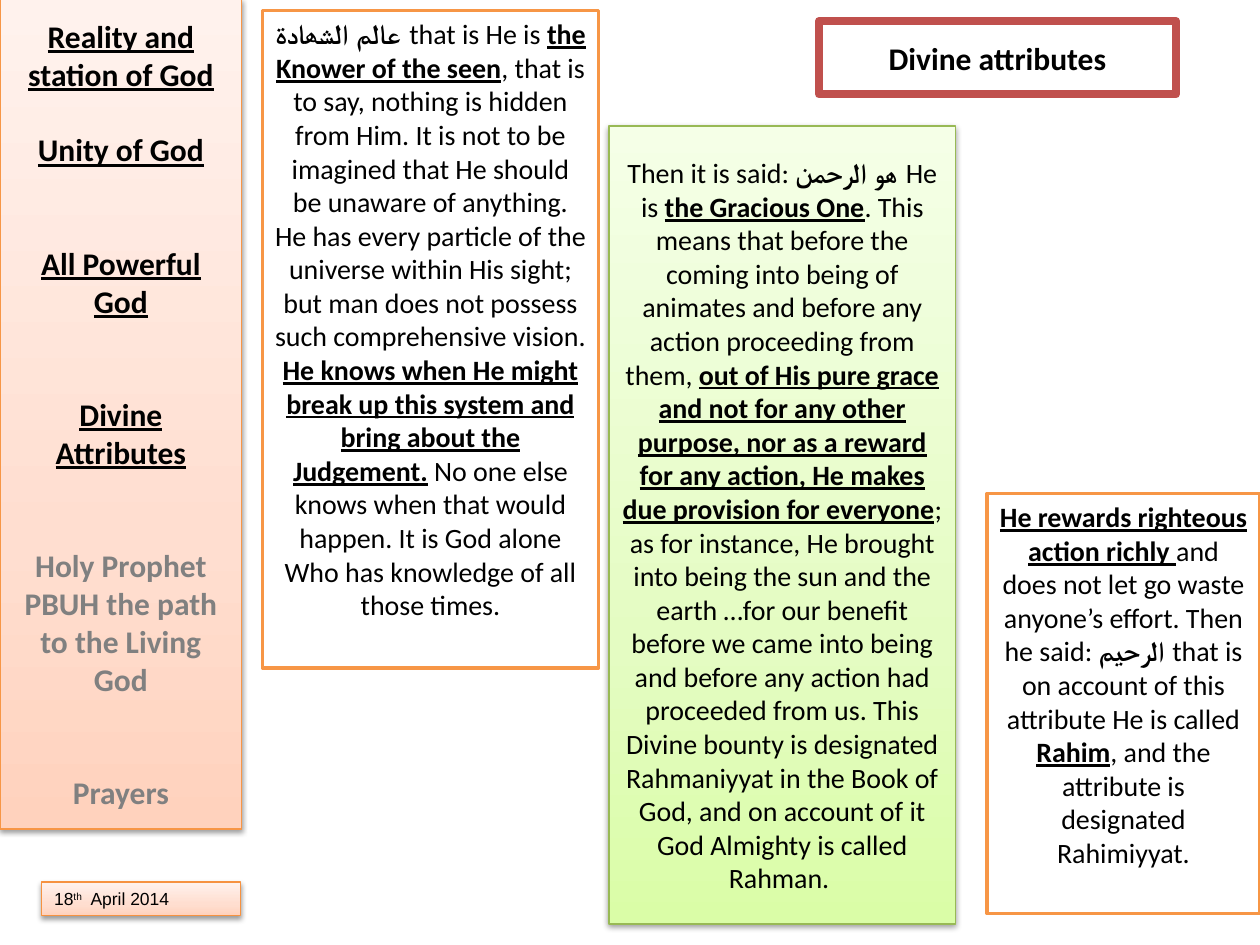
from lxml.etree import SubElement
from pptx import Presentation
from pptx.dml.color import RGBColor
from pptx.enum.shapes import MSO_SHAPE
from pptx.enum.text import MSO_ANCHOR, PP_ALIGN
from pptx.oxml import parse_xml
from pptx.oxml.ns import nsdecls, qn
from pptx.util import Pt

COLORS = {
    "text": "000000",
    "upcoming": "808080",
    "white": "FFFFFF",
    "orange": "F79646",
    "date_edge": "F69240",
    "green": "98B955",
    "red": "C0504D",
}
PEACH = ("FFD2BD", "FFDED0", "FFF2ED")
LIME = ("DAFDA7", "E4FCC2", "F5FFE7")
LINE_HEIGHT = 21.6


def add_panel(left, top, width, height, edge, weight, gradient=None, anchor=MSO_ANCHOR.TOP):
    """Add a box, white and flat, or with a bottom-to-top gradient and a soft shadow."""
    panel = slide.shapes.add_shape(
        MSO_SHAPE.RECTANGLE, Pt(left), Pt(top), Pt(width), Pt(height))
    panel.shadow.inherit = False
    panel.line.color.rgb = RGBColor.from_string(COLORS[edge])
    panel.line.width = Pt(weight)
    panel.text_frame.word_wrap = True
    panel.text_frame.vertical_anchor = anchor
    if gradient is None:
        panel.fill.solid()
        panel.fill.fore_color.rgb = RGBColor.from_string(COLORS["white"])
        return panel

    panel.fill.gradient()
    properties = panel.element.spPr
    stops = "".join(
        f'<a:gs pos="{position}"><a:srgbClr val="{color}"/></a:gs>'
        for position, color in zip((0, 35000, 100000), gradient))
    properties.replace(properties.find(qn("a:gradFill")), parse_xml(
        f'<a:gradFill {nsdecls("a")} rotWithShape="1"><a:gsLst>{stops}</a:gsLst>'
        '<a:lin ang="16200000" scaled="0"/></a:gradFill>'))
    shadow = SubElement(
        properties.find(qn("a:effectLst")), qn("a:outerShdw"),
        blurRad=str(Pt(3.1)), dist=str(Pt(1.6)), dir="5400000", rotWithShape="0")
    shadow_color = SubElement(shadow, qn("a:srgbClr"), val="000000")
    SubElement(shadow_color, qn("a:alpha"), val="38000")
    return panel


def write_runs(paragraph, runs, size, color="text", font="Calibri", align=PP_ALIGN.CENTER):
    """Write (text, style) pairs; style holds b for bold and u for underlined."""
    paragraph.alignment = align
    for text, style in runs:
        run = paragraph.add_run()
        run.text = text
        run.font.name = font
        run.font.size = Pt(size)
        run.font.bold = "b" in style
        run.font.underline = "u" in style
        run.font.color.rgb = RGBColor.from_string(COLORS[color])


prs = Presentation()
prs.slide_width, prs.slide_height = Pt(720), Pt(540)
slide = prs.slides.add_slide(prs.slide_layouts[6])

# Topic sidebar: topic, style, colour, empty lines above
topics = [
    ("Reality and station of God", "bu", "text", 0),
    ("Unity of God", "bu", "text", 1),
    ("All Powerful God", "bu", "text", 2),
    ("Divine Attributes", "bu", "text", 2),
    ("Holy Prophet PBUH the path to the Living God", "b", "upcoming", 2),
    ("Prayers", "b", "upcoming", 2),
]
sidebar = add_panel(0, -0.7, 138.2, 474.4, "orange", 0.75, PEACH, MSO_ANCHOR.MIDDLE).text_frame
for number, (topic, style, color, gap) in enumerate(topics):
    paragraph = sidebar.add_paragraph() if number else sidebar.paragraphs[0]
    paragraph.space_before = Pt(gap * LINE_HEIGHT)
    write_runs(paragraph, [(topic, style)], 18, color)

# Date
date = add_panel(23.8, 504, 113.8, 19.4, "date_edge", 0.75, PEACH).text_frame
date.word_wrap = False
date_line = date.paragraphs[0]
write_runs(date_line, [("18", ""), ("th", ""), ("  April 2014", "")], 10,
           font="Arial", align=PP_ALIGN.LEFT)
date_line.runs[1].font._element.set("baseline", "30000")

# Attribute panels
knower = add_panel(150, 6, 192, 375.8, "orange", 2)
write_runs(knower.text_frame.paragraphs[0], [
    ("عالم الشھادۃ ", "b"),
    ("that is He is ", ""),
    ("the Knower of the seen", "bu"),
    (", that is to say, nothing is hidden from Him. It is not to be imagined that He should "
     "be unaware of anything. He has every particle of the universe within His sight; but man "
     "does not possess such comprehensive vision. ", ""),
    ("He knows when He might break up this system and bring about the Judgement.", "bu"),
    (" No one else knows when that would happen. It is God alone Who has knowledge of all "
     "those times.", ""),
], 16)

gracious = add_panel(348, 72, 198, 456, "green", 0.75, LIME, MSO_ANCHOR.MIDDLE)
write_runs(gracious.text_frame.paragraphs[0], [
    ("Then it is said: ", ""),
    ("ھو الرحمن ", "b"),
    ("He is ", ""),
    ("the Gracious One", "bu"),
    (". This means that before the coming into being of animates and before any action "
     "proceeding from them, ", ""),
    ("out of His pure grace and not for any other purpose, nor as a reward for any action, "
     "He makes due provision for everyone", "bu"),
    ("; as for instance, He brought into being the sun and the earth …for our benefit before "
     "we came into being and before any action had proceeded from us. This Divine bounty is "
     "designated Rahmaniyyat in the Book of God, and on account of it God Almighty is called "
     "Rahman. ", ""),
], 16)

title = add_panel(468, 12, 204, 42, "red", 4.5, anchor=MSO_ANCHOR.MIDDLE)
write_runs(title.text_frame.paragraphs[0], [("Divine attributes", "b")], 18)

rewarder = add_panel(564, 282, 156, 240, "orange", 2)
write_runs(rewarder.text_frame.paragraphs[0], [
    ("He rewards righteous action richly ", "bu"),
    ("and does not let go waste anyone’s effort. Then he said: ", ""),
    ("الرحیم ", "b"),
    ("that is on account of this attribute He is called ", ""),
    ("Rahim", "bu"),
    (", and the attribute is designated Rahimiyyat.", ""),
], 16)

prs.save("out.pptx")
